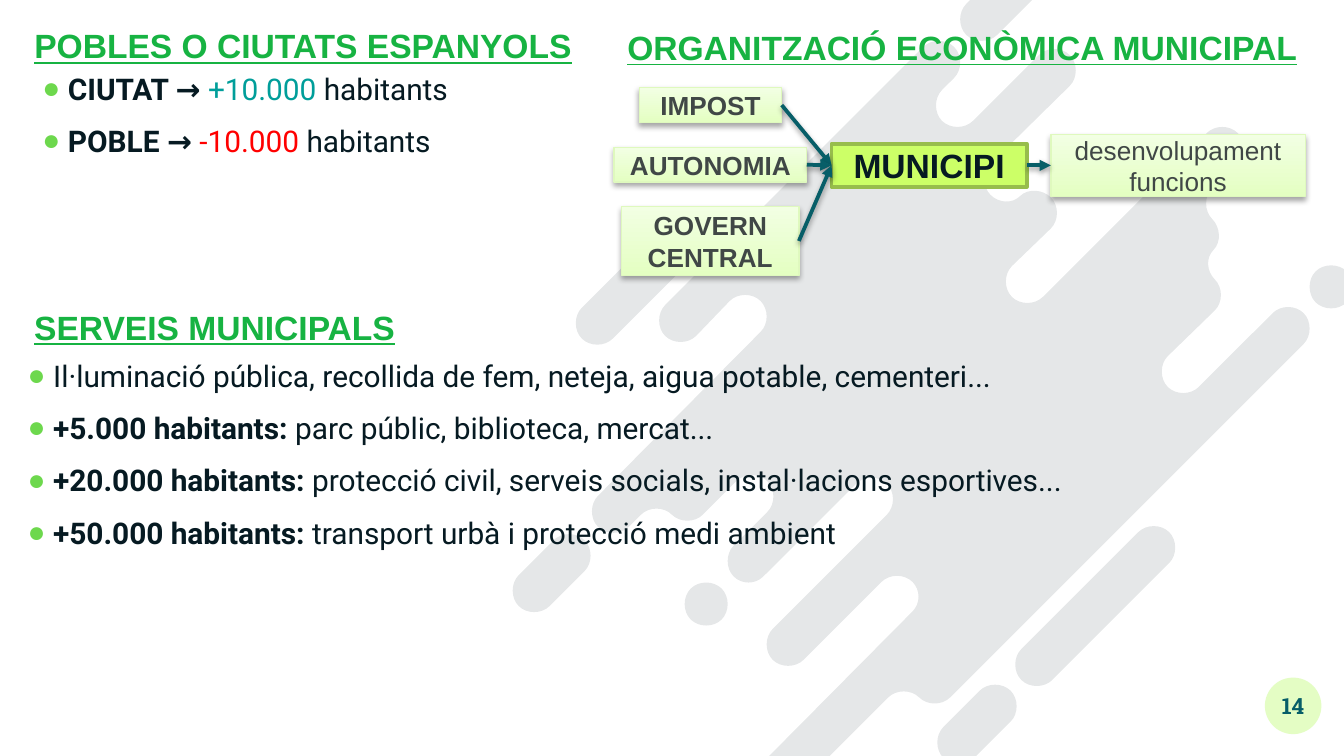
from lxml import etree
from pptx import Presentation
from pptx.dml.color import RGBColor
from pptx.enum.shapes import MSO_CONNECTOR, MSO_SHAPE
from pptx.enum.text import MSO_ANCHOR, MSO_AUTO_SIZE, PP_ALIGN
from pptx.oxml import parse_xml
from pptx.oxml.ns import qn
from pptx.util import Pt

RECTANGLE, ELLIPSE = MSO_SHAPE.RECTANGLE, MSO_SHAPE.OVAL
STRAIGHT = MSO_CONNECTOR.STRAIGHT
TOP, MIDDLE = MSO_ANCHOR.TOP, MSO_ANCHOR.MIDDLE
LEFT, CENTER = PP_ALIGN.LEFT, PP_ALIGN.CENTER
FIXED = MSO_AUTO_SIZE.NONE
LEFT_SITE, RIGHT_SITE = 1, 3

THEME = {
    "ink": "061A22", "heading": "17B342", "bullet": "6DD84D", "more": "009E9A",
    "less": "FF0000", "label": "404746", "arrow": "075E68", "badge": "E4FDC4",
    "hub": "CCFF67", "hub_line": "97BD4C", "card": ("E4FFC2", "F2FFE3"),
    "card_line": "DFF9BE", "shadow": "000000", "heading_size": 18, "body_size": 16,
    "label_size": 14, "badge_size": 12,
    "sans": "Arial", "body": "Roboto", "slab": "Roboto Slab",
}
NAMESPACE = "http://schemas.openxmlformats.org/drawingml/2006/main"


def color(name):
    return RGBColor.from_string(THEME.get(name, name))


def write(para, text, font, size, ink, **formats):
    span = para.add_run()
    span.text = text
    span.font.color.rgb = color(ink)
    for name, value in {"name": THEME[font], "size": Pt(THEME[size]), **formats}.items():
        setattr(span.font, name, value)


deck = Presentation()
deck.slide_width, deck.slide_height = Pt(720), Pt(405)
page = deck.slides.add_slide(deck.slide_layouts[3])
title, town_list, service_list = page.placeholders

# Background splash, on a grid of 0.72 pt: diagonal runs joined by quarter arcs
GRID, CAP = Pt(0.72), 23
contours = [[
    (687, 35), (495, 227), (495, 250), (518, 250), (543, 224), (566, 224), (566, 247),
    (445, 369), (445, 392), (468, 392), (477, 383), (500, 383), (523, 383), (548, 358),
    (571, 358), (571, 381), (546, 406), (546, 429), (568, 429), (637, 360), (660, 360),
    (660, 383), (575, 468), (575, 491), (598, 491), (656, 433), (679, 433), (679, 455),
    (562, 573), (562, 595), (585, 595), (661, 519), (684, 519), (707, 519), (970, 256),
    (970, 233), (947, 233), (892, 288), (869, 288), (869, 265), (904, 231), (904, 208),
    (903, 186), (902, 163), (902, 140), (921, 122), (921, 99), (898, 99), (776, 221),
    (753, 221), (753, 198), (782, 170), (782, 147), (759, 146), (737, 145), (737, 122),
    (796, 64), (796, 41), (773, 41), (724, 90), (701, 90), (701, 67), (710, 58), (710, 35),
]]
for x, y, run in [(729, 514, 27), (514, 438, 0), (979, 202, 0), (847, 396, 87),
                  (412, 402, 26), (500, 162, 67), (757, -35, 38)]:
    low_x, low_y = x - run, y + run
    capsule = [(x, y), (low_x, low_y), (low_x, low_y + CAP),
               (low_x + CAP, low_y + CAP), (x + CAP, y + CAP), (x + CAP, y)]
    contours.append(list(dict.fromkeys(capsule)))

builder = page.shapes.build_freeform(*contours[0][0], scale=GRID)
for index, corners in enumerate(contours):
    if index:
        builder.move_to(*corners[0])
    builder.add_line_segments(corners[1:] + corners[:1], close=True)
splash = builder.convert_to_shape()

# Turn each axis-aligned side into an arc that continues the heading
for part in list(splash.element.iter(qn("a:moveTo"), qn("a:lnTo"))):
    point = part.find(qn("a:pt"))
    end = int(point.get("x")), int(point.get("y"))
    if part.tag == qn("a:moveTo"):
        start, heading = end, (-1, 1)
        continue
    dx, dy = end[0] - start[0], end[1] - start[1]
    if min(abs(dx), abs(dy)) > 2 * max(abs(dx), abs(dy)) / CAP:
        heading = (1 if dx > 0 else -1, 1 if dy > 0 else -1)
    else:
        # The heading is kept along the chord and reversed across it
        turned = (-heading[0], heading[1]) if abs(dy) > abs(dx) else (heading[0], -heading[1])
        reach = 0.276 * max(abs(dx), abs(dy))
        part.tag = qn("a:cubicBezTo")
        controls = ([a + reach * h for a, h in zip(start, heading)],
                    [b - reach * k for b, k in zip(end, turned)])
        for place, (x, y) in enumerate(controls):
            part.insert(place, part.makeelement(
                qn("a:pt"), {"x": str(round(x)), "y": str(round(y))}))
        heading = turned
    start = end

splash.shadow.inherit = False
splash.fill.solid()
splash.fill.fore_color.rgb = color("ink")
splash.line.fill.background()
tint = splash.element.spPr.find(qn("a:solidFill"))[0]
etree.SubElement(tint, qn("a:alpha"), val="10000")
page.shapes.element.insert(2, splash.element)

# Headings
for text, left, top, width in [("POBLES O CIUTATS ESPANYOLS", 11.2, 10, 315),
                               ("ORGANITZACIÓ ECONÒMICA MUNICIPAL", 329, 11, 379),
                               ("SERVEIS MUNICIPALS", 11.2, 160.8, 212)]:
    place = [Pt(value) for value in (left, top, width, 29)]
    box = title if left < 20 and top < 20 else page.shapes.add_textbox(*place)
    box.left, box.top, box.width, box.height = place
    frame = box.text_frame
    for name, value in {"word_wrap": False, "auto_size": FIXED, "vertical_anchor": TOP}.items():
        setattr(frame, name, value)
    frame.paragraphs[0].alignment = LEFT
    write(frame.paragraphs[0], text, "sans", "heading_size", "heading", bold=True, underline=True)

# Bulleted lists: each item is a row of (text, ink, bold)
towns = [
    [("CIUTAT → ", "ink", True), ("+10.000", "more", False), (" habitants", "ink", False)],
    [("POBLE → ", "ink", True), ("-10.000 ", "less", False), ("habitants", "ink", False)],
]
services = [[("Il·luminació pública, recollida de fem, neteja, aigua potable, cementeri...",
              "ink", False)]]
for people, offer in [("5.000", "parc públic, biblioteca, mercat..."),
                      ("20.000", "protecció civil, serveis socials, instal·lacions esportives..."),
                      ("50.000", "transport urbà i protecció medi ambient")]:
    services.append([(f"+{people} habitants:", "ink", True), (f" {offer}", "ink", False)])

for box, items, place in [(town_list, towns, (22.7, 34.9, 293, 65.5)),
                          (service_list, services, (14.8, 188.5, 569, 119))]:
    box.left, box.top, box.width, box.height = (Pt(value) for value in place)
    frame = box.text_frame
    for name, value in {"margin_left": 0, "margin_top": 0, "margin_right": 0, "margin_bottom": 0,
                        "word_wrap": True, "auto_size": FIXED, "vertical_anchor": TOP}.items():
        setattr(frame, name, value)
    for index, item in enumerate(items):
        para = frame.add_paragraph() if index else frame.paragraphs[0]
        for name, value in {"alignment": LEFT, "line_spacing": 1.15,
                            "space_before": Pt(6), "space_after": Pt(0)}.items():
            setattr(para, name, value)
        layout = para._p.get_or_add_pPr()
        layout.set("marL", str(Pt(13.7)))
        layout.set("indent", str(-Pt(13.7)))
        bullet_color = etree.SubElement(layout, qn("a:buClr"))
        etree.SubElement(bullet_color, qn("a:srgbClr"), val=THEME["bullet"])
        etree.SubElement(layout, qn("a:buFont"), typeface=THEME["sans"])
        etree.SubElement(layout, qn("a:buChar"), char="●")
        for text, ink, bold in item:
            write(para, text, "body", "body_size", ink, bold=bold)

# Diagram boxes and page number badge
nodes, shaded = {}, []
for text, kind, place in [("MUNICIPI", "hub", (445.5, 77, 104.5, 23.2)),
                          ("desenvolupament funcions", "result", (563, 72, 136.3, 33.2)),
                          ("IMPOST", "source", (342.5, 46.8, 76.3, 19)),
                          ("GOVERN CENTRAL", "source", (333, 110.7, 95, 36.8)),
                          ("AUTONOMIA", "source", (329, 79, 103.2, 18.5)),
                          ("14", "badge", (677.6, 363, 30.3, 30.3))]:
    preset = ELLIPSE if kind == "badge" else RECTANGLE
    box = page.shapes.add_shape(preset, *(Pt(value) for value in place))
    nodes[text] = box
    box.shadow.inherit = False
    frame = box.text_frame
    frame.word_wrap, frame.vertical_anchor = True, MIDDLE
    para = frame.paragraphs[0]
    para.alignment = CENTER
    if kind == "badge":
        frame.margin_left = frame.margin_right = frame.margin_top = frame.margin_bottom = 0
        box.line.fill.background()
        write(para, text, "slab", "badge_size", "arrow", bold=True)
    elif kind == "hub":
        box.line.color.rgb, box.line.width = color("hub_line"), Pt(2)
        write(para, text, "sans", "heading_size", "ink", bold=True)
    else:
        box.line.color.rgb, box.line.width = color("card_line"), Pt(0.75)
        write(para, text, "sans", "label_size", "label", bold=kind == "source")
    if kind in ("badge", "hub"):
        box.fill.solid()
        box.fill.fore_color.rgb = color(kind)
        continue
    box.fill.gradient()
    box.fill.gradient_angle = 90
    for stop, shade in zip(box.fill.gradient_stops, THEME["card"]):
        stop.color.rgb = color(shade)
    shaded.append((box.element.spPr.find(qn("a:effectLst")), 1.8, 35))

# Arrows from the sources to the town and on to the result
for origin, target in [("IMPOST", "MUNICIPI"), ("AUTONOMIA", "MUNICIPI"),
                       ("GOVERN CENTRAL", "MUNICIPI"), ("MUNICIPI", "desenvolupament funcions")]:
    arrow = page.shapes.add_connector(STRAIGHT, 0, 0, 0, 0)
    arrow.begin_connect(nodes[origin], RIGHT_SITE)
    arrow.end_connect(nodes[target], LEFT_SITE)
    arrow.line.color.rgb, arrow.line.width = color("arrow"), Pt(2)
    etree.SubElement(arrow.line._get_or_add_ln(), qn("a:tailEnd"), type="triangle")
    shaded.append((etree.SubElement(arrow.element.spPr, qn("a:effectLst")), 1.6, 38))

# Soft shadows below cards and arrows
for effects, distance, percent in shaded:
    effects.append(parse_xml(
        f'<a:outerShdw xmlns:a="{NAMESPACE}" blurRad="{Pt(3.1)}" dist="{Pt(distance)}" '
        f'dir="5400000" rotWithShape="0"><a:srgbClr val="{THEME["shadow"]}">'
        f'<a:alpha val="{percent * 1000}"/></a:srgbClr></a:outerShdw>'))

deck.save("out.pptx")
